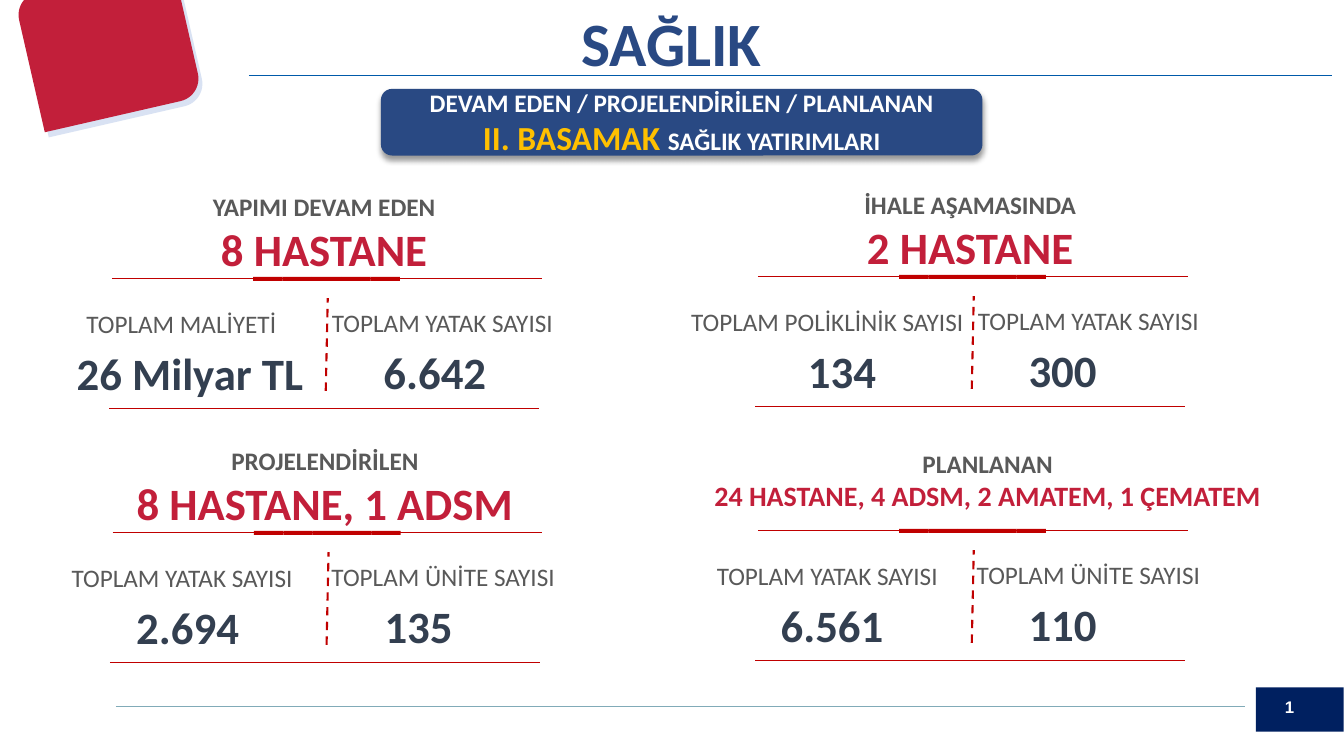
from dataclasses import dataclass

import lxml.etree
import pptx
import pptx.dml.color
import pptx.enum.dml
import pptx.enum.shapes
import pptx.enum.text
import pptx.oxml.ns
import pptx.shapes.autoshape
import pptx.slide
import pptx.text.text
import pptx.util

Cm = pptx.util.Cm
Pt = pptx.util.Pt
RGBColor = pptx.dml.color.RGBColor
Shape = pptx.shapes.autoshape.Shape
Page = pptx.slide.Slide
Align = pptx.enum.text.PP_ALIGN
Preset = pptx.enum.shapes.MSO_SHAPE
qn = pptx.oxml.ns.qn

WHITE = RGBColor(0xFF, 0xFF, 0xFF)
NAVY = RGBColor(0x00, 0x20, 0x60)
BLUE = RGBColor(0x29, 0x49, 0x83)
HEADER_BLUE = RGBColor(0x00, 0x5A, 0xAA)
PALE_BLUE = RGBColor(0x44, 0x72, 0xC4)
TEAL = RGBColor(0x81, 0xAB, 0xB8)
CRIMSON = RGBColor(0xC2, 0x1F, 0x3A)
RED = RGBColor(0xC0, 0x00, 0x00)
GRAY = RGBColor(0x59, 0x59, 0x59)
SLATE = RGBColor(0x33, 0x3F, 0x50)
GOLD = RGBColor(0xFF, 0xC0, 0x00)

RULE_LENGTH = 10.83
BAR_COUNT, BAR_WIDTH, BAR_HEIGHT = 5, 0.74, 0.1


@dataclass
class Metric:
    """A labelled figure; the centre is measured from the block's left."""
    label: str
    label_width: float
    value: str
    value_centre: float
    value_width: float


@dataclass
class Block:
    """One group of investments, placed by the start of its upper rule."""
    left: float
    top: float
    stage: str
    count: str
    metrics: tuple[Metric, Metric]
    count_size: int = 32
    heading_centre: float = 5.35
    heading_width: float = 13.23
    heading_rise: float = 2.31


BLOCKS = [
    Block(2.82, 7.01, "YAPIMI DEVAM EDEN", "8 HASTANE", (
        Metric("TOPLAM MALİYETİ", 5.33, "26 Milyar TL", 1.97, 6.27),
        Metric("TOPLAM YATAK SAYISI", 6.12, "6.642", 8.14, 3.12))),
    Block(19.1, 6.96, "İHALE AŞAMASINDA", "2 HASTANE", (
        Metric("TOPLAM POLİKLİNİK SAYISI", 7.44, "134", 2.12, 2.26),
        Metric("TOPLAM YATAK SAYISI", 6.12, "300", 7.68, 2.26))),
    Block(2.84, 13.41, "PROJELENDİRİLEN", "8 HASTANE, 1 ADSM", (
        Metric("TOPLAM YATAK SAYISI", 6.12, "2.694", 1.89, 3.12),
        Metric("TOPLAM ÜNİTE SAYISI", 6.2, "135", 7.71, 2.26))),
    Block(19.1, 13.36, "PLANLANAN", "24 HASTANE, 4 ADSM, 2 AMATEM, 1 ÇEMATEM", (
        Metric("TOPLAM YATAK SAYISI", 6.12, "6.561", 1.87, 3.12),
        Metric("TOPLAM ÜNİTE SAYISI", 6.2, "110", 7.68, 2.26)),
        20, 5.79, 14.88, 2.18),
]
LABEL_CENTRES = (1.75, 8.33)
METRIC_DROPS = (0.64, 0.61)


def add_span(para: pptx.text.text._Paragraph, text: str, *, size: float,
             color: RGBColor, bold: bool = True) -> None:
    span = para.add_run()
    span.text = text
    span.font.name = "Calibri"
    span.font.size = Pt(size)
    span.font.bold = bold
    span.font.color.rgb = color


def add_text(page: Page, text: str, left: float, top: float, width: float,
             height: float, *, size: float, color: RGBColor, bold: bool = True,
             wrap: bool = True) -> Shape:
    box = page.shapes.add_textbox(Cm(left), Cm(top), Cm(width), Cm(height))
    box.text_frame.word_wrap = wrap
    box.text_frame.auto_size = pptx.enum.text.MSO_AUTO_SIZE.SHAPE_TO_FIT_TEXT
    para = box.text_frame.paragraphs[0]
    para.alignment = Align.CENTER
    add_span(para, text, size=size, color=color, bold=bold)
    return box


def add_centred_paragraph(box: Shape) -> pptx.text.text._Paragraph:
    para = box.text_frame.add_paragraph()
    para.alignment = Align.CENTER
    return para


def add_line(page: Page, start: tuple[float, float], end: tuple[float, float],
             color: RGBColor, width: float, dashed: bool = False) -> None:
    line = page.shapes.add_connector(
        pptx.enum.shapes.MSO_CONNECTOR.STRAIGHT,
        Cm(start[0]), Cm(start[1]), Cm(end[0]), Cm(end[1]))
    line.line.color.rgb = color
    line.line.width = Pt(width)
    if dashed:
        line.line.dash_style = pptx.enum.dml.MSO_LINE.DASH
    lxml.etree.SubElement(line._element.spPr, qn("a:effectLst"))


def add_filled(page: Page, preset: Preset, left: float, top: float, width: float,
               height: float, color: RGBColor, rotation: float = 0) -> Shape:
    shape = page.shapes.add_shape(preset, Cm(left), Cm(top), Cm(width), Cm(height))
    shape.shadow.inherit = False
    shape.fill.solid()
    shape.fill.fore_color.rgb = color
    shape.line.fill.background()
    shape.rotation = rotation
    return shape


def set_alpha(color_element: lxml.etree._Element, percent: int) -> None:
    lxml.etree.SubElement(color_element, qn("a:alpha"), val=str(percent * 1000))


def add_page_number(page: Page) -> None:
    add_filled(page, Preset.RECTANGLE, 31.65, 17.32, 2.21, 1.12, NAVY)
    box = page.shapes.add_textbox(Cm(32.13), Cm(17.42), Cm(1.5), Cm(0.76))
    para = box.text_frame.paragraphs[0]
    field = lxml.etree.SubElement(para._p, qn("a:fld"), type="slidenum",
                                  id="{B6F15528-21DE-4FAA-801E-634DDDAF4B2B}")
    style = lxml.etree.SubElement(field, qn("a:rPr"), sz="1200", b="1")
    fill = lxml.etree.SubElement(style, qn("a:solidFill"))
    lxml.etree.SubElement(fill, qn("a:srgbClr"), val=str(WHITE))
    lxml.etree.SubElement(style, qn("a:latin"), typeface="Arial")
    lxml.etree.SubElement(field, qn("a:t")).text = "1"


def add_corner_badge(page: Page) -> None:
    back = add_filled(page, Preset.ROUND_2_DIAG_RECTANGLE,
                      0.79, -0.43, 4.09, 3.48, PALE_BLUE, 347.1)
    set_alpha(back._element.spPr.find(f".//{qn('a:srgbClr')}"), 20)
    add_filled(page, Preset.ROUND_2_DIAG_RECTANGLE,
               0.69, -0.56, 4.09, 3.48, CRIMSON, 347.1)


def add_banner(page: Page) -> None:
    banner = add_filled(page, Preset.ROUNDED_RECTANGLE, 9.6, 2.24, 15.16, 1.68, BLUE)
    effects = banner._element.spPr.find(qn("a:effectLst"))
    shadow = lxml.etree.SubElement(
        effects, qn("a:outerShdw"), blurRad=str(Pt(4)), dist=str(Pt(3)),
        dir="5400000", algn="t", rotWithShape="0")
    set_alpha(lxml.etree.SubElement(shadow, qn("a:srgbClr"), val="000000"), 40)
    banner.text_frame.word_wrap = True
    banner.text_frame.vertical_anchor = pptx.enum.text.MSO_ANCHOR.MIDDLE
    first = banner.text_frame.paragraphs[0]
    first.alignment = Align.CENTER
    add_span(first, "DEVAM EDEN / PROJELENDİRİLEN / PLANLANAN", size=18, color=WHITE)
    second = add_centred_paragraph(banner)
    add_span(second, "II. BASAMAK ", size=24, color=GOLD)
    add_span(second, "SAĞLIK YATIRIMLARI", size=18, color=WHITE)


def add_block(page: Page, block: Block) -> None:
    left, top = block.left, block.top
    for index in range(BAR_COUNT):
        add_filled(page, Preset.RECTANGLE, left + 3.56 + index * BAR_WIDTH,
                   top - 0.03, BAR_WIDTH, BAR_HEIGHT, RED)
    for x, y in ((left, top), (left - 0.07, top + 3.29)):
        add_line(page, (x, y), (x + RULE_LENGTH, y), RED, 0.5)
    add_line(page, (left + 5.39, top + 2.84), (left + 5.44, top + 0.5), RED, 1.5, True)

    heading = add_text(page, block.stage,
                       left + block.heading_centre - block.heading_width / 2,
                       top - block.heading_rise, block.heading_width,
                       block.heading_rise, size=18, color=GRAY)
    add_span(add_centred_paragraph(heading), block.count,
             size=block.count_size, color=CRIMSON)

    for metric, centre, drop in zip(block.metrics, LABEL_CENTRES, METRIC_DROPS):
        add_text(page, metric.label, left + centre - metric.label_width / 2,
                 top + drop, metric.label_width, 1, size=18, color=GRAY,
                 bold=False, wrap=False)
        add_text(page, metric.value,
                 left + metric.value_centre - metric.value_width / 2,
                 top + drop + 0.93, metric.value_width, 1.6, size=32, color=SLATE,
                 wrap=False)


def main() -> None:
    deck = pptx.Presentation()
    deck.slide_width, deck.slide_height = Cm(33.87), Cm(19.05)
    page = deck.slides.add_slide(deck.slide_layouts[6])
    add_line(page, (2.92, 17.81), (31.37, 17.81), TEAL, 0.75)
    add_page_number(page)
    add_line(page, (6.27, 1.91), (33.58, 1.91), HEADER_BLUE, 1)
    add_corner_badge(page)
    add_text(page, "SAĞLIK", 3.3, 0, 27.25, 2.13, size=44, color=BLUE)
    for block in BLOCKS:
        add_block(page, block)
    add_banner(page)
    deck.save("out.pptx")


if __name__ == "__main__":
    main()
